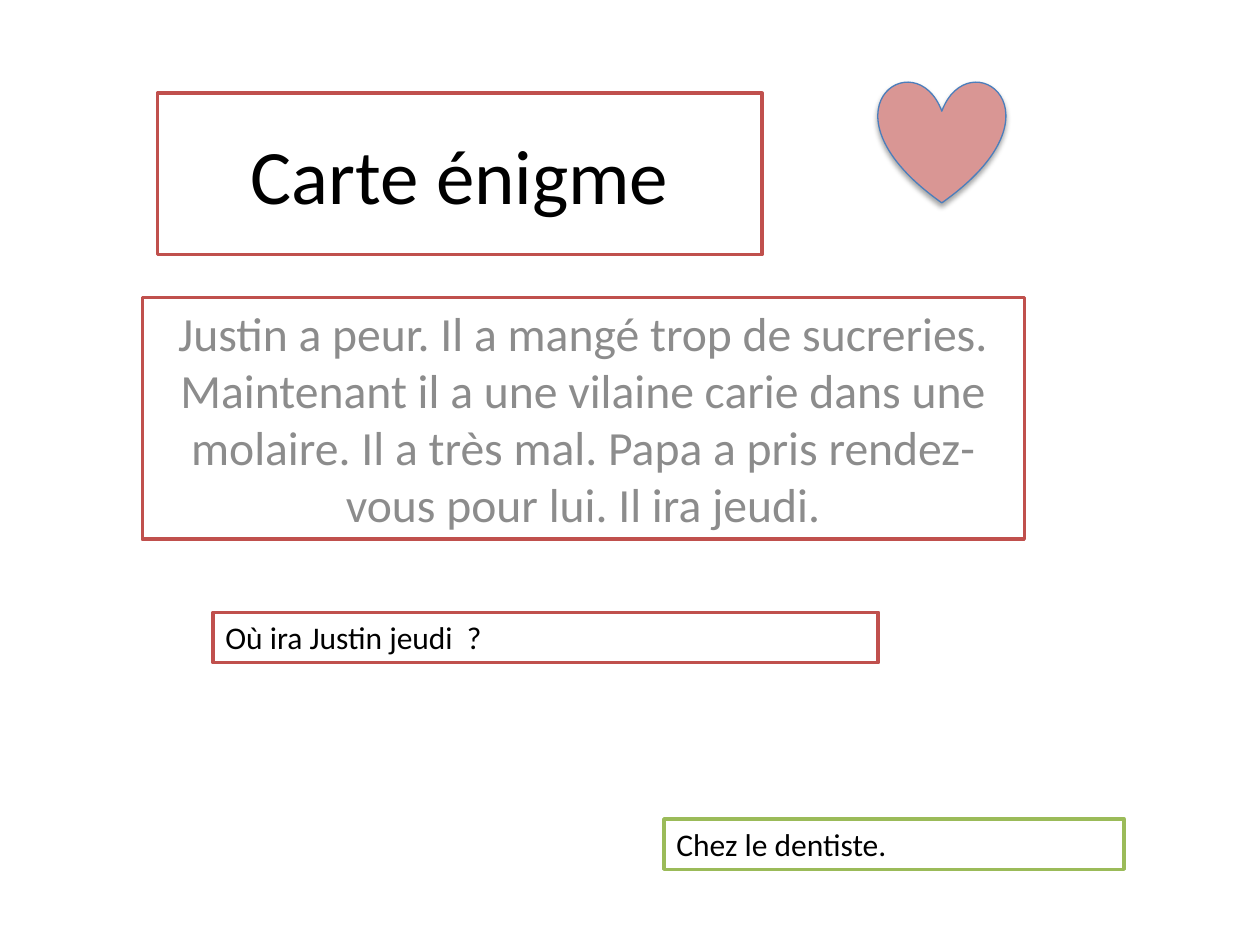
import pptx
import pptx.util
import pptx.dml.color
import pptx.enum.shapes
import pptx.enum.text
import pptx.oxml
import pptx.oxml.ns

Inches, Pt = pptx.util.Inches, pptx.util.Pt
KIND = pptx.enum.shapes.MSO_SHAPE
ALIGN = pptx.enum.text.PP_ALIGN
ANCHOR = pptx.enum.text.MSO_ANCHOR

COLORS = {
    "white": "FFFFFF", "black": "000000", "grey": "8C8C8C",
    "red": "C0504D", "green": "9BBB59", "pink": "D99694", "blue": "4B7EBC",
}

STORY = ("Justin a peur. Il a mangé trop de sucreries. Maintenant il a une "
         "vilaine carie dans une molaire. Il a très mal. Papa a pris "
         "rendez-vous pour lui. Il ira jeudi.")

# text, (left, top, width, height), line, size, ink, align, anchor
CARDS = [
    ("Carte énigme", (1.25, 0.74, 4.8, 1.28), "red", 44, "black",
     ALIGN.CENTER, ANCHOR.MIDDLE),
    (STORY, (1.13, 2.36, 7, 1.92), "red", 27.2, "grey",
     ALIGN.CENTER, ANCHOR.TOP),
    ("Où ira Justin jeudi  ?", (1.69, 4.86, 5.28, 0.4), "red", 18, "black",
     ALIGN.LEFT, ANCHOR.TOP),
    ("Chez le dentiste.", (5.27, 6.5, 3.65, 0.4), "green", 18, "black",
     ALIGN.LEFT, ANCHOR.TOP),
]
HEART = (6.97, 0.64, 1.01, 0.97)


def color(name):
    return pptx.dml.color.RGBColor.from_string(COLORS[name])


def add_shape(slide, kind, box, fill, line, width):
    shape = slide.shapes.add_shape(kind, *map(Inches, box))
    shape.shadow.inherit = False
    shape.fill.solid()
    shape.fill.fore_color.rgb = color(fill)
    shape.line.color.rgb = color(line)
    shape.line.width = Pt(width)
    return shape


def add_card(slide, text, box, line, size, ink, align, anchor):
    frame = add_shape(slide, KIND.RECTANGLE, box, "white", line, 2).text_frame
    frame.word_wrap = True
    frame.vertical_anchor = anchor
    para = frame.paragraphs[0]
    para.alignment = align
    run = para.add_run()
    run.text = text
    run.font.name = "Calibri"
    run.font.size = Pt(size)
    run.font.color.rgb = color(ink)


def add_shadow(shape, blur, gap, alpha):
    """Cast a soft black shadow straight down; alpha is a percentage."""
    effects = shape.element.spPr.find(pptx.oxml.ns.qn("a:effectLst"))
    effects.append(pptx.oxml.parse_xml(
        f'<a:outerShdw {pptx.oxml.ns.nsdecls("a")} blurRad="{Pt(blur)}" '
        f'dist="{Pt(gap)}" dir="5400000" rotWithShape="0">'
        f'<a:srgbClr val="{COLORS["black"]}"><a:alpha val="{alpha * 1000}"/>'
        '</a:srgbClr></a:outerShdw>'))


def main():
    deck = pptx.Presentation()
    deck.slide_width, deck.slide_height = Inches(10), Inches(7.5)
    slide = deck.slides.add_slide(deck.slide_layouts[6])
    for card in CARDS:
        add_card(slide, *card)
    heart = add_shape(slide, KIND.HEART, HEART, "pink", "blue", 0.75)
    add_shadow(heart, 3.1, 1.8, 35)
    deck.save("out.pptx")


if __name__ == "__main__":
    main()
